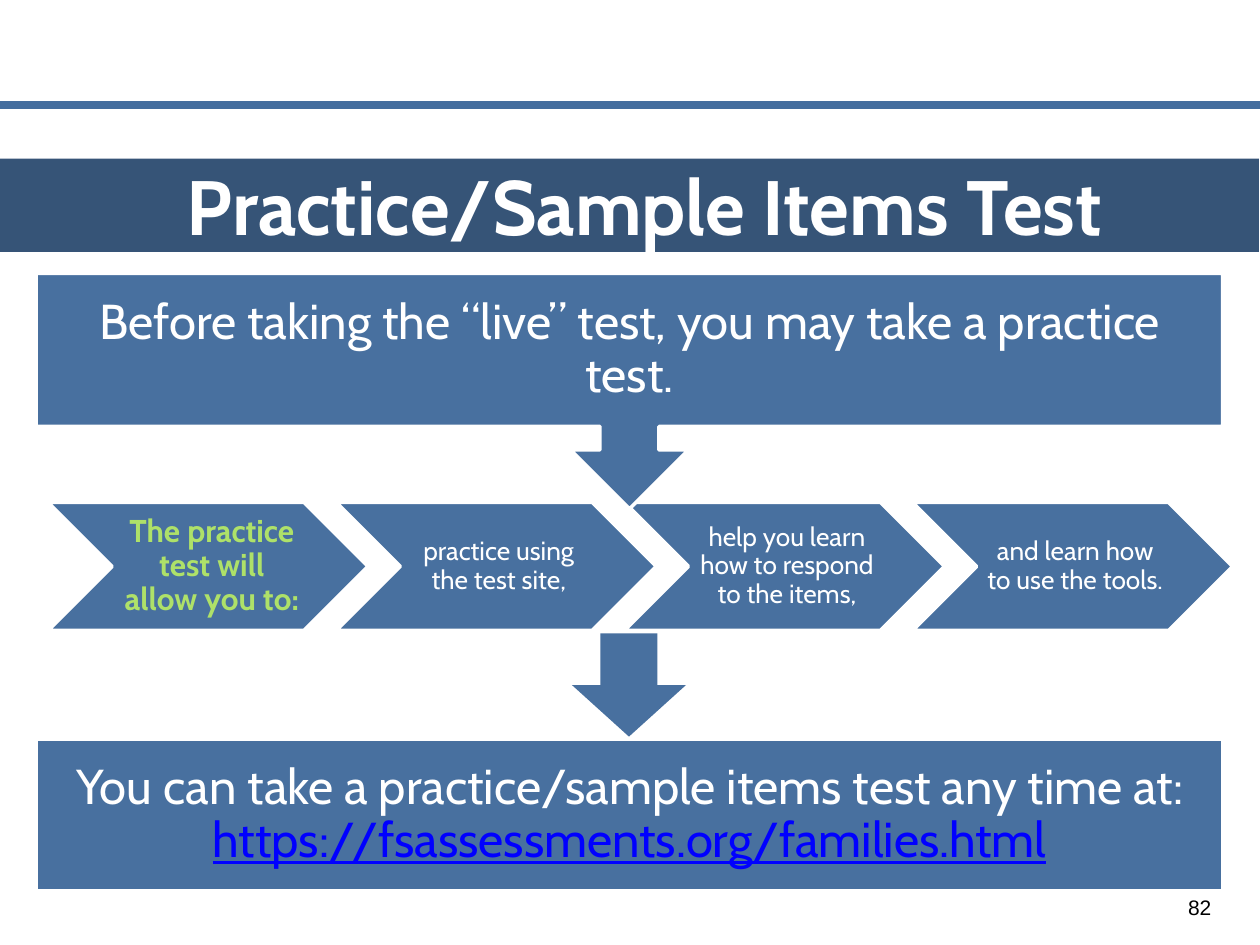
"""Build the slide about the practice and sample items test."""
from lxml import etree
from pptx import Presentation
from pptx.dml.color import RGBColor
from pptx.enum.shapes import MSO_CONNECTOR, MSO_SHAPE
from pptx.enum.text import MSO_ANCHOR, MSO_AUTO_SIZE, PP_ALIGN
from pptx.oxml.ns import qn
from pptx.util import Cm, Pt

CENTER = PP_ALIGN.CENTER
MIDDLE, TOP = MSO_ANCHOR.MIDDLE, MSO_ANCHOR.TOP
RECT, CHEVRON = MSO_SHAPE.RECTANGLE, MSO_SHAPE.CHEVRON
CALLOUT, ARROW = MSO_SHAPE.DOWN_ARROW_CALLOUT, MSO_SHAPE.DOWN_ARROW
STRAIGHT = MSO_CONNECTOR.STRAIGHT
NO_FIT = MSO_AUTO_SIZE.NONE
COLORS = {
    "blue": "48709F", "navy": "365477", "rule": "446D9E", "white": "FFFFFF",
    "green": "AEE169", "link": "0000FF", "black": "000000",
}


def color(name):
    return RGBColor.from_string(COLORS[name])


def write(shape, text, size=28, tint="white", font="Cabin", bold=False,
          under=False, pad=(0, 0, 0, 0), anchor=MIDDLE, space=0.9):
    frame = shape.text_frame
    frame.word_wrap = True
    frame.auto_size = NO_FIT
    frame.vertical_anchor = anchor
    frame.margin_left, frame.margin_top, frame.margin_right, frame.margin_bottom = map(Cm, pad)
    para = frame.paragraphs[0]
    para.alignment = CENTER
    para.line_spacing = space
    run = para.add_run()
    run.text = text
    run.font.name = font
    run.font.size = Pt(size)
    run.font.bold = bold
    run.font.underline = under
    run.font.color.rgb = color(tint)


deck = Presentation()
deck.slide_width, deck.slide_height = Cm(25.4), Cm(19.05)
slide = deck.slides.add_slide(deck.slide_layouts[5])
shapes = slide.shapes

rule = shapes.add_connector(STRAIGHT, Cm(0), Cm(2.12), Cm(25.4), Cm(2.12))
rule.line.color.rgb = color("rule")
rule.line.width = Pt(4.5)
etree.SubElement(rule._element.spPr, qn("a:effectLst"))

title = shapes.title
title.left, title.top, title.width, title.height = Cm(-0.02), Cm(3.2), Cm(25.4), Cm(1.88)
title.fill.solid()
title.fill.fore_color.rgb = color("navy")
write(title, "Practice/Sample Items Test", size=44, bold=True,
      pad=(0.64, 0, 0, 0), anchor=TOP, space=1.0)

wide = {"pad": (0.56, 0.56, 0.56, 0.56)}
step = {"size": 15, "pad": (0.15, 0.05, 0.05, 0.05)}
lead = {"size": 18, "tint": "green", "bold": True, "pad": (0.2, 0.08, 0.05, 0.08)}
steps = [
    ("The practice test will allow you to:", lead),
    ("practice using the test site,", step),
    ("help you learn how to respond to the items,", step),
    ("and learn how to use the tools.", step),
]
parts = [(RECT, 0.73, 14.9, 23.92, 3.06, [],
          "You can take a practice/sample items test any time at: ", wide)]
for num, (text, style) in enumerate(steps):
    parts.append((CHEVRON, 0.97 + 5.81 * num, 10.13, 6.45, 2.58, [0.5], text, style))
parts.append((CALLOUT, 0.73, 5.51, 23.92, 4.75, [0.25, 0.25, 0.25, 0.65],
              "Before taking the “live” test, you may take a practice test.", wide))
parts.append((ARROW, 11.53, 12.77, 2.3, 2.08, [0.5, 0.5], "", {}))

made = []
for kind, left, top, width, height, turns, text, style in parts:
    part = shapes.add_shape(kind, Cm(left), Cm(top), Cm(width), Cm(height))
    part.shadow.inherit = False
    part.fill.solid()
    part.fill.fore_color.rgb = color("blue")
    for num, turn in enumerate(turns):
        part.adjustments[num] = turn
    if text:
        part.line.color.rgb = color("white")
        part.line.width = Pt(2)
        write(part, text, **style)
    else:
        part.line.fill.background()
    made.append(part)
write(made[0], "https://fsassessments.org/families.html", tint="link", under=True, **wide)

page = shapes.add_textbox(Cm(23.6), Cm(17.78), Cm(1.17), Cm(1.02))
write(page, "82", size=12, tint="black", font="Arial", space=1.0)

deck.save("out.pptx")
